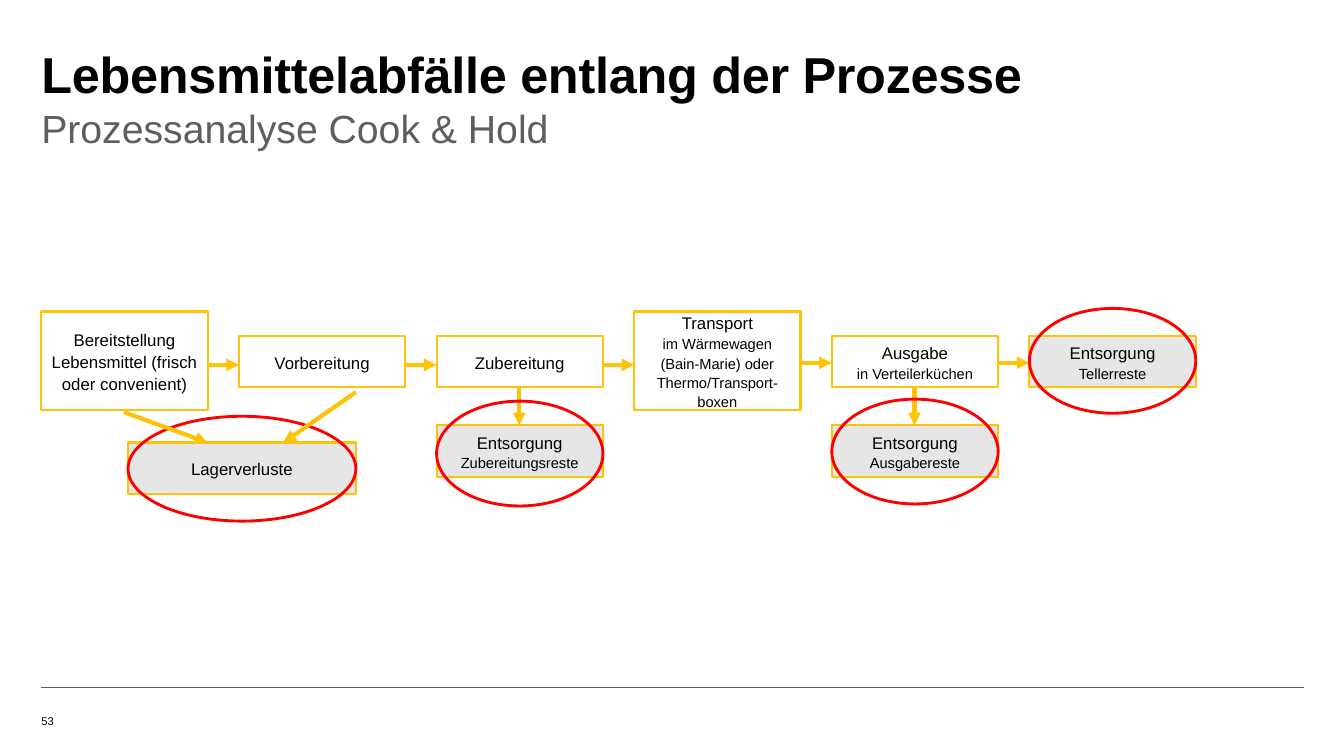
from lxml.etree import SubElement
from pptx import Presentation
from pptx.dml.color import RGBColor
from pptx.enum.shapes import MSO_CONNECTOR, MSO_SHAPE
from pptx.enum.text import MSO_ANCHOR, PP_ALIGN
from pptx.oxml.ns import qn
from pptx.util import Emu, Pt

EMU_PER_PX = 9144  # 100 px to the inch
BLACK, WHITE, DARK_GREY, LIGHT_GREY = "000000", "FFFFFF", "5E5E5E", "E6E6E6"
YELLOW, RED = "FEC306", "FF0000"


def px(length):
    return Emu(length * EMU_PER_PX)


def color(hex_string):
    return RGBColor.from_string(hex_string)


class ProcessSlide:
    font = "Arial"

    def __init__(self, slide):
        self.slide = slide
        self.shapes = slide.shapes

    def style(self, paragraph, size, font_color=BLACK, bold=False):
        paragraph.font.name = self.font
        paragraph.font.size = Pt(size)
        paragraph.font.bold = bold
        paragraph.font.color.rgb = color(font_color)

    def text(self, words, left, top, width, height, size, font_color=BLACK,
             bold=False, spacing=1.0, tracking=0):
        """Add one bottom-anchored line; tracking is in hundredths of a point."""
        frame = self.shapes.add_textbox(px(left), px(top), px(width), px(height)).text_frame
        frame.margin_left = frame.margin_right = frame.margin_top = frame.margin_bottom = 0
        frame.word_wrap = True
        frame.vertical_anchor = MSO_ANCHOR.BOTTOM
        line = frame.paragraphs[0]
        line.text = words
        line.line_spacing = spacing
        self.style(line, size, font_color, bold)
        if tracking:
            line.runs[0]._r.get_or_add_rPr().set("spc", str(tracking))

    def outline(self, preset, left, top, width, height, line_color, weight):
        shape = self.shapes.add_shape(preset, px(left), px(top), px(width), px(height))
        shape.shadow.inherit = False
        shape.fill.background()
        shape.line.color.rgb = color(line_color)
        shape.line.width = Pt(weight)
        return shape

    def step(self, heading, detail, left, top, width, height, fill=WHITE):
        box = self.outline(MSO_SHAPE.RECTANGLE, left, top, width, height, YELLOW, 1.5)
        box.fill.solid()
        box.fill.fore_color.rgb = color(fill)
        frame = box.text_frame
        frame.word_wrap = True
        frame.vertical_anchor = MSO_ANCHOR.MIDDLE
        frame.text = f"{heading}\n{detail}" if detail else heading
        for paragraph, size in zip(frame.paragraphs, (12, 10.5)):
            paragraph.alignment = PP_ALIGN.CENTER
            paragraph.line_spacing = 1.1
            self.style(paragraph, size)

    def highlight(self, left, top, width):
        self.outline(MSO_SHAPE.OVAL, left, top, width, 104, RED, 2.04)

    def line(self, x1, y1, x2, y2, line_color, weight):
        connector = self.shapes.add_connector(
            MSO_CONNECTOR.STRAIGHT, px(x1), px(y1), px(x2), px(y2))
        connector.line.color.rgb = color(line_color)
        connector.line.width = Pt(weight)
        SubElement(connector._element.spPr, qn("a:effectLst"))
        return connector

    def arrow(self, x1, y1, x2, y2):
        connector = self.line(x1, y1, x2, y2, YELLOW, 3)
        SubElement(connector.line._get_or_add_ln(), qn("a:tailEnd"), type="triangle")


STEP_WIDTH, STEP_HEIGHT, TALL_HEIGHT = 165, 51, 98
STEP_TOP, TALL_TOP, WASTE_TOP = 333, 309, 422
STEP_LEFTS = [41 + 196 * column for column in range(6)]

PROCESS_STEPS = [
    ("Bereitstellung Lebensmittel (frisch oder convenient)", "", True),
    ("Vorbereitung", "", False),
    ("Zubereitung", "", False),
    ("Transport", "im Wärmewagen (Bain-Marie) oder Thermo/Transport- boxen", True),
    ("Ausgabe", "in Verteilerküchen", False),
]
# column, detail, top of box, top of highlight
WASTE = [
    (5, "Tellerreste", STEP_TOP, 306),
    (2, "Zubereitungsreste", WASTE_TOP, 398),
    (4, "Ausgabereste", WASTE_TOP, 396),
]


def main():
    presentation = Presentation()
    presentation.slide_width, presentation.slide_height = px(1333), px(750)
    page = ProcessSlide(presentation.slides.add_slide(presentation.slide_layouts[6]))

    page.line(41, 682, 1293, 682, DARK_GREY, 0.5)
    page.text("53", 41, 690, 157, 32, 8)
    page.text("Lebensmittelabfälle entlang der Prozesse", 41, 41, 984, 62, 36,
              bold=True, tracking=-20)
    page.text("Prozessanalyse Cook & Hold", 41, 95, 965, 55, 28, DARK_GREY, spacing=1.1)

    for left, (heading, detail, tall) in zip(STEP_LEFTS, PROCESS_STEPS):
        top, height = (TALL_TOP, TALL_HEIGHT) if tall else (STEP_TOP, STEP_HEIGHT)
        page.step(heading, detail, left, top, STEP_WIDTH, height)
    for column, detail, top, _ in WASTE:
        page.step("Entsorgung", detail, STEP_LEFTS[column], top,
                  STEP_WIDTH, STEP_HEIGHT, LIGHT_GREY)

    for column, next_left in enumerate(STEP_LEFTS[1:]):
        y = 362 if column < 3 else 360
        page.arrow(STEP_LEFTS[column] + STEP_WIDTH, y, next_left, y)
    for column, _, top, highlight_top in WASTE:
        left = STEP_LEFTS[column]
        if top == WASTE_TOP:
            center = left + STEP_WIDTH // 2
            page.arrow(center, STEP_TOP + STEP_HEIGHT, center, top)
        page.highlight(left, highlight_top, STEP_WIDTH)

    page.step("Lagerverluste", "", 127, 439, 226, STEP_HEIGHT, LIGHT_GREY)
    page.highlight(127, 413, 226)
    page.arrow(123, 409, 206, 439)
    page.arrow(353, 389, 281, 439)

    presentation.save("out.pptx")


if __name__ == "__main__":
    main()
